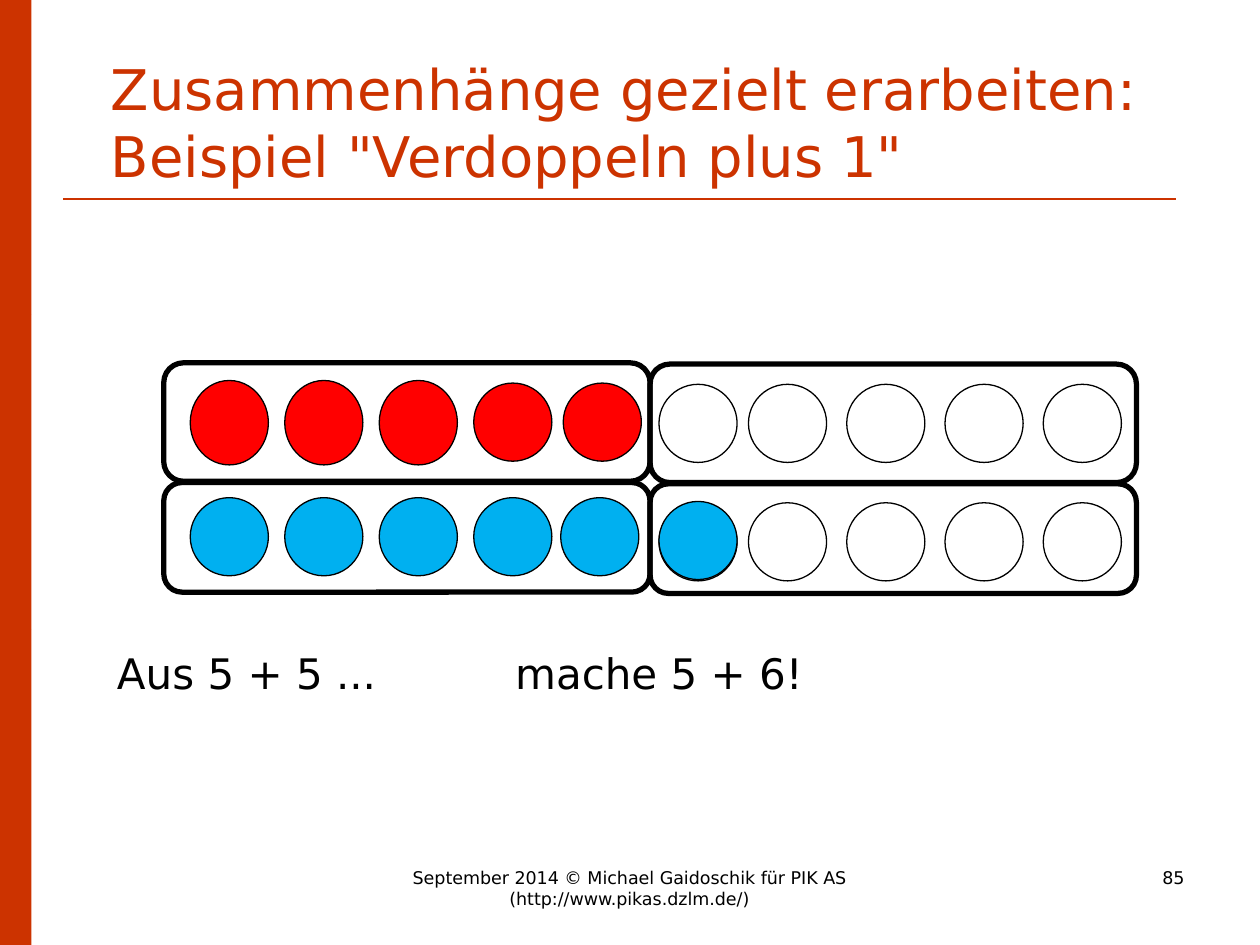
from lxml import etree
from pptx import Presentation
from pptx.dml.color import RGBColor
from pptx.enum.shapes import MSO_CONNECTOR, MSO_SHAPE
from pptx.enum.text import MSO_ANCHOR, MSO_AUTO_SIZE, PP_ALIGN
from pptx.oxml.ns import qn
from pptx.util import Inches, Pt

RECTANGLE = MSO_SHAPE.RECTANGLE
ROUNDED = MSO_SHAPE.ROUNDED_RECTANGLE
OVAL = MSO_SHAPE.OVAL
STRAIGHT = MSO_CONNECTOR.STRAIGHT
LEFT, CENTER, RIGHT = PP_ALIGN.LEFT, PP_ALIGN.CENTER, PP_ALIGN.RIGHT
BOTTOM = MSO_ANCHOR.BOTTOM
NO_FIT = MSO_AUTO_SIZE.NONE
FIT_SHAPE = MSO_AUTO_SIZE.SHAPE_TO_FIT_TEXT

FONT = "DejaVu Sans"
COLORS = {
    "accent": "CC3300",
    "text": "000000",
    "red": "FF0000",
    "blue": "00B0F0",
    "white": "FFFFFF",
}
WIDTH, HEIGHT = 10, 7.5
FRAME_WIDTH = 3.86
FRAME_COLUMNS = (1.3, 1.3 + FRAME_WIDTH)
DISC = 0.62
PITCH_LEFT, PITCH_RIGHT = 0.75, 0.78
LEFT_COLUMNS = [1.51 + PITCH_LEFT * column for column in range(4)]
RIGHT_COLUMNS = [5.23] + [5.94 + PITCH_RIGHT * column for column in range(4)]


def color(name):
    return RGBColor.from_string(COLORS[name])


def add_figure(page, kind, left, top, width, height, fill=None, line_width=None):
    figure = page.shapes.add_shape(
        kind, Inches(left), Inches(top), Inches(width), Inches(height))
    figure.shadow.inherit = False
    if fill:
        figure.fill.solid()
        figure.fill.fore_color.rgb = color(fill)
    else:
        figure.fill.background()
    if line_width:
        figure.line.color.rgb = color("text")
        figure.line.width = Pt(line_width)
    else:
        figure.line.fill.background()
    return figure


def add_side_bar(page):
    for third in range(3):
        add_figure(page, RECTANGLE, 0, third * HEIGHT / 3,
                   WIDTH / 40, HEIGHT / 3, "accent")


def add_rule(page):
    rule = page.shapes.add_connector(
        STRAIGHT, Inches(0.5), Inches(1.58), Inches(9.33), Inches(1.58))
    rule.line.color.rgb = color("accent")
    rule.line.width = Pt(1.5)
    etree.SubElement(rule._element.spPr, qn("a:effectLst"))


def add_frame(page, left, top, height):
    frame = add_figure(page, ROUNDED, left, top, FRAME_WIDTH, height, line_width=3)
    frame.adjustments[0] = 0.167


def add_discs(page, columns, top, fill, height=DISC):
    for left in columns:
        add_figure(page, OVAL, left, top, DISC, height, fill, 0.75)


def format_text(frame, size, name, alignment):
    for para in frame.paragraphs:
        para.alignment = alignment
        for span in para.runs:
            span.font.size = Pt(size)
            span.font.name = FONT
            span.font.color.rgb = color(name)


def set_title(page, text):
    title = page.shapes.title
    title.left, title.top = Inches(0.5), Inches(0.3)
    title.width, title.height = Inches(9), Inches(1.25)
    frame = title.text_frame
    frame.text = text
    frame.auto_size = NO_FIT
    frame.vertical_anchor = BOTTOM
    frame.margin_left = Inches(0.38)
    format_text(frame, 32, "accent", LEFT)


def add_text(page, text, left, top, width, size, alignment=LEFT, wrap=True):
    box = page.shapes.add_textbox(
        Inches(left), Inches(top), Inches(width), Inches(0.5))
    frame = box.text_frame
    frame.text = text
    frame.word_wrap = wrap
    frame.auto_size = NO_FIT if wrap else FIT_SHAPE
    format_text(frame, size, "text", alignment)


def add_twenty_field(page):
    for column, left in enumerate(FRAME_COLUMNS):
        add_frame(page, left, 2.88 + 0.01 * column, 0.94)
        add_frame(page, left, 3.83 + 0.01 * column, 0.87)
    add_discs(page, LEFT_COLUMNS[:3], 3.02, "red", 0.67)
    add_discs(page, [LEFT_COLUMNS[3], 4.47], 3.04, "red")
    add_discs(page, LEFT_COLUMNS + [4.45], 3.95, "blue")
    add_discs(page, RIGHT_COLUMNS, 3.05, "white")
    add_discs(page, RIGHT_COLUMNS[:1], 3.99, None)
    add_discs(page, RIGHT_COLUMNS[1:], 3.99, "white")
    add_discs(page, RIGHT_COLUMNS[:1], 3.98, "blue")


def main():
    deck = Presentation()
    deck.slide_width, deck.slide_height = Inches(WIDTH), Inches(HEIGHT)
    page = deck.slides.add_slide(deck.slide_layouts[5])
    add_side_bar(page)
    add_rule(page)
    set_title(page, "Zusammenhänge gezielt erarbeiten:\vBeispiel \"Verdoppeln plus 1\"")
    add_twenty_field(page)
    add_text(page, "Aus 5 + 5 ...", 0.83, 5.09, 2.35, 24, wrap=False)
    add_text(page, "mache 5 + 6!", 3.99, 5.09, 2.49, 24, wrap=False)
    add_text(page, "September 2014 © Michael Gaidoschik für PIK AS (http://www.pikas.dzlm.de/)",
             2.87, 6.83, 4.25, 10, CENTER)
    add_text(page, "85", 7.17, 6.83, 2.33, 10, RIGHT)
    deck.save("out.pptx")


if __name__ == "__main__":
    main()
